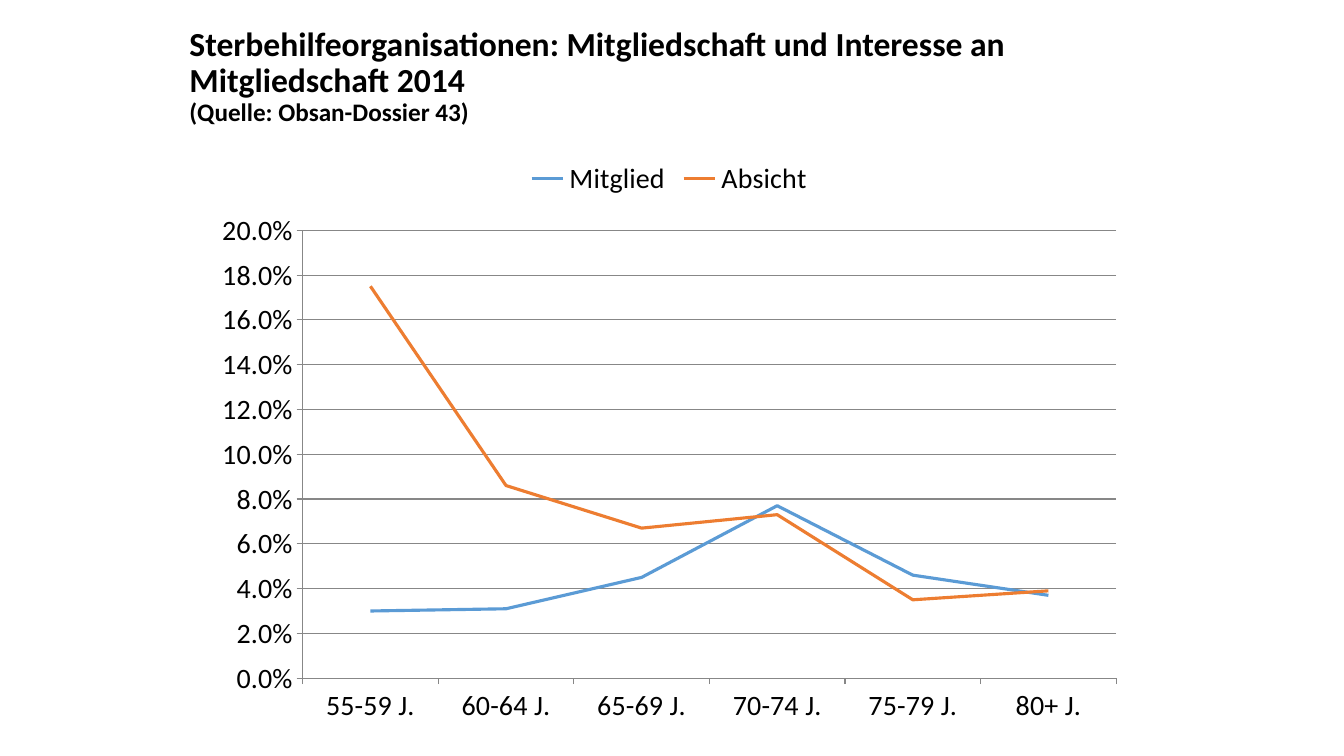
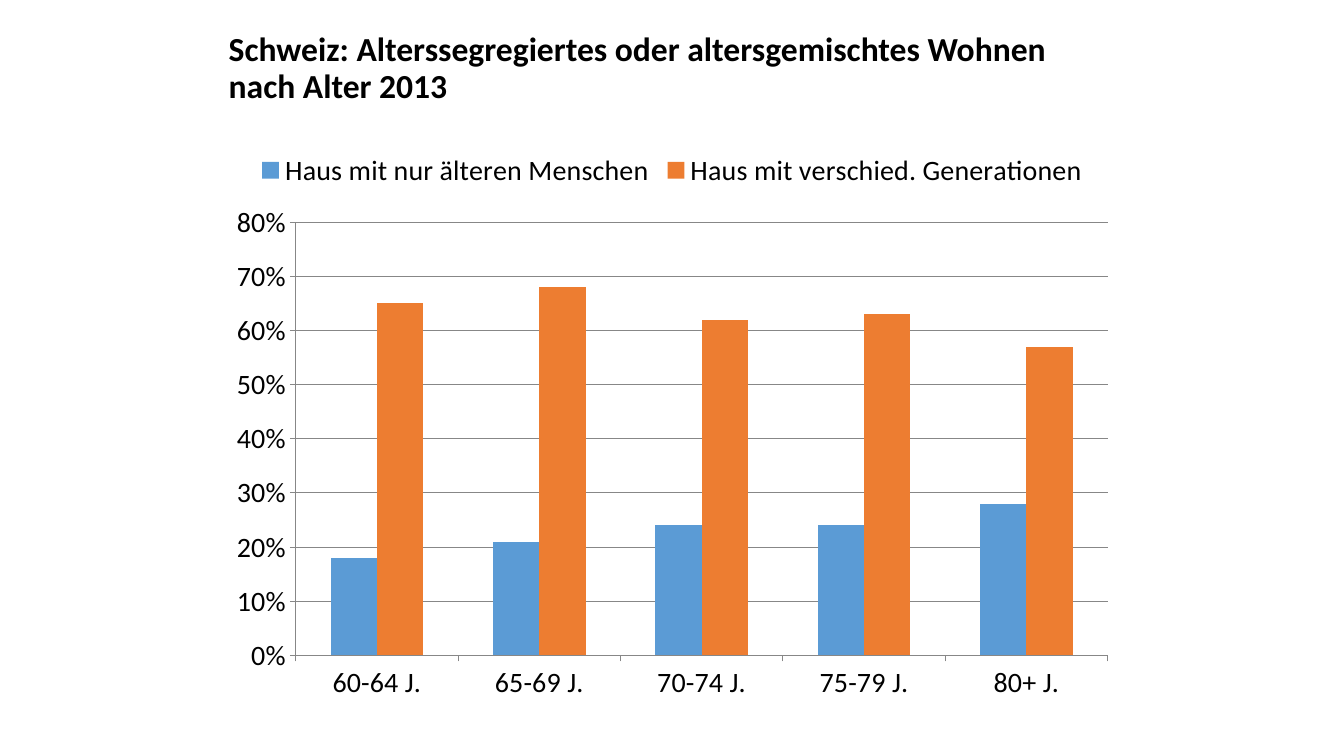
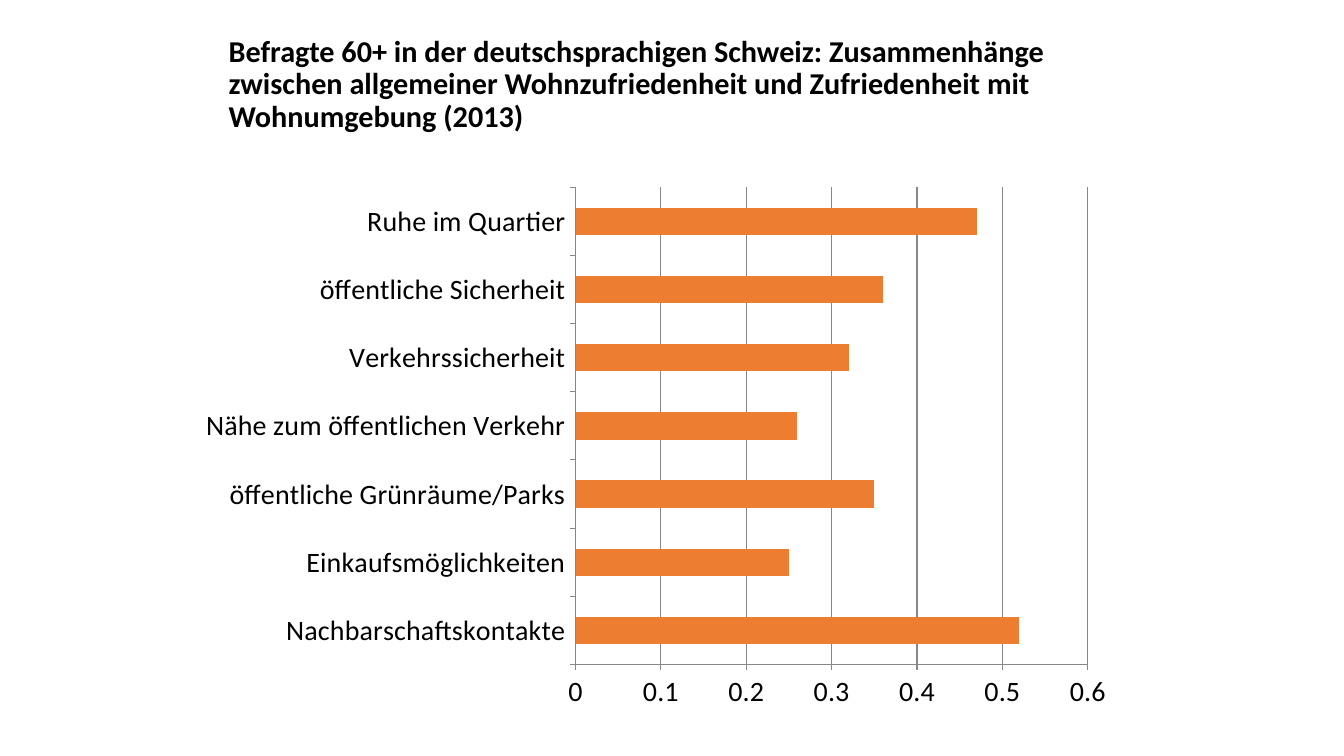
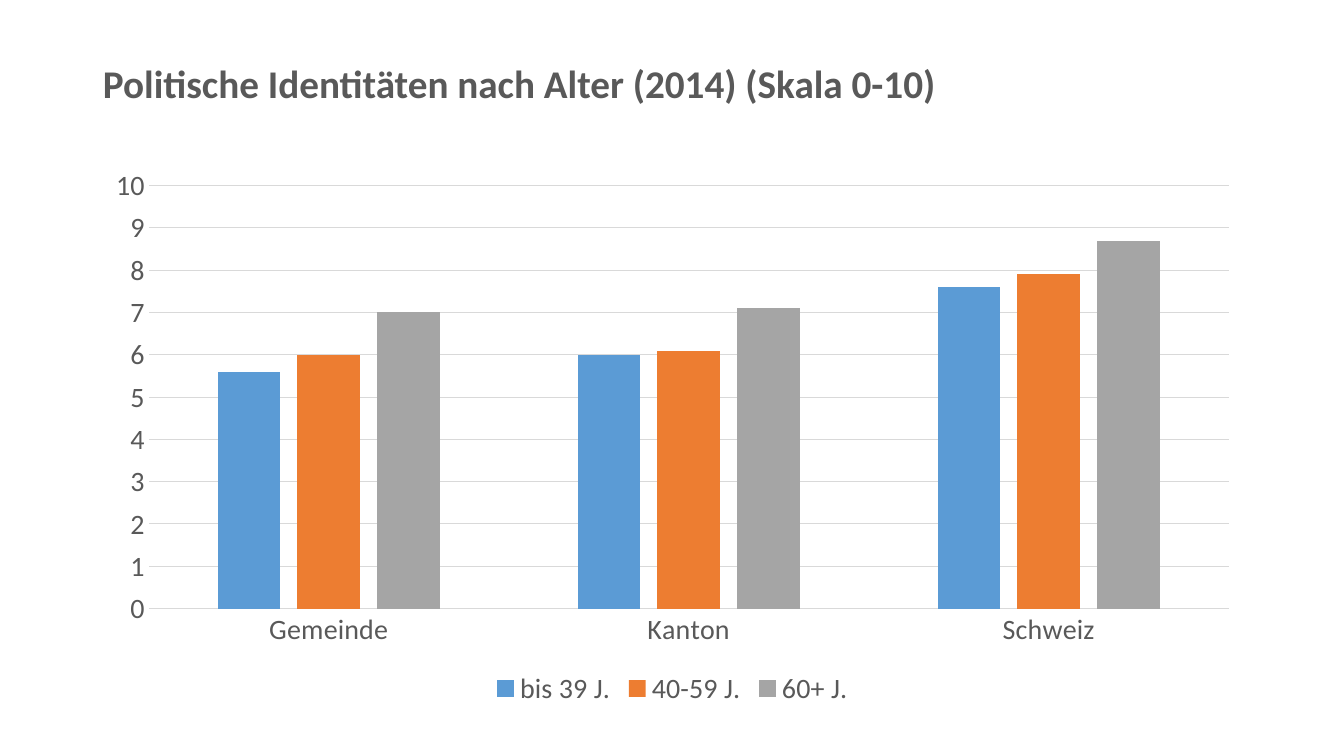
from dataclasses import dataclass

from pptx import Presentation
from pptx.chart.data import CategoryChartData
from pptx.dml.color import RGBColor
from pptx.enum.chart import XL_CHART_TYPE as ChartType
from pptx.enum.chart import XL_LEGEND_POSITION as LegendPosition
from pptx.enum.chart import XL_TICK_MARK as TickMark
from pptx.enum.text import MSO_ANCHOR as Anchor
from pptx.enum.text import MSO_AUTO_SIZE as AutoSize
from pptx.enum.text import PP_ALIGN as Align
from pptx.util import Cm, Pt

TITLE_ONLY_LAYOUT = 5


@dataclass(frozen=True)
class Theme:
    font: str = "Calibri"
    black: RGBColor = RGBColor(0x00, 0x00, 0x00)
    gray_text: RGBColor = RGBColor(0x59, 0x59, 0x59)
    dark_rule: RGBColor = RGBColor(0x87, 0x87, 0x87)
    light_rule: RGBColor = RGBColor(0xD9, 0xD9, 0xD9)
    blue: RGBColor = RGBColor(0x5B, 0x9B, 0xD5)
    orange: RGBColor = RGBColor(0xED, 0x7D, 0x31)
    gray: RGBColor = RGBColor(0xA5, 0xA5, 0xA5)
    title_size: Pt = Pt(24)
    long_title_size: Pt = Pt(21.6)
    large_title_size: Pt = Pt(28)
    source_size: Pt = Pt(18)
    chart_size: Pt = Pt(20)
    rule_width: Pt = Pt(0.75)
    series_width: Pt = Pt(2.25)
    title_spacing: float = 0.9


THEME = Theme()


@dataclass(frozen=True)
class Box:
    """A rectangle in centimetres."""
    left: float
    top: float
    width: float
    height: float

    def lengths(self):
        return tuple(Cm(value) for value in
                     (self.left, self.top, self.width, self.height))


@dataclass(frozen=True)
class ChartStyle:
    text_color: RGBColor
    rule_color: RGBColor
    tick_mark: TickMark
    value_line: bool
    gap_width: int
    overlap: int


DARK_STYLE = ChartStyle(THEME.black, THEME.dark_rule, TickMark.OUTSIDE,
                        True, 150, 0)
LIGHT_STYLE = ChartStyle(THEME.gray_text, THEME.light_rule, TickMark.NONE,
                         False, 219, -27)


@dataclass(frozen=True)
class ChartContent:
    kind: ChartType
    categories: tuple
    series: tuple  # (name, color, values) for each series
    maximum: float
    step: float
    number_format: str = "General"
    legend: LegendPosition | None = None
    style: ChartStyle = DARK_STYLE


def place_title(slide, box, text, size, color, source=None):
    """Fill the title placeholder, with an optional smaller source line."""
    title = slide.shapes.title
    title.left, title.top, title.width, title.height = box.lengths()
    frame = title.text_frame
    frame.word_wrap = True
    frame.auto_size = AutoSize.NONE
    frame.vertical_anchor = Anchor.MIDDLE
    paragraph = frame.paragraphs[0]
    paragraph.alignment = Align.LEFT
    paragraph.line_spacing = THEME.title_spacing
    font = paragraph.font
    font.name, font.size, font.bold = THEME.font, size, True
    font.color.rgb = color
    paragraph.add_run().text = text
    if source:
        paragraph.add_line_break()
        run = paragraph.add_run()
        run.text = source
        run.font.size = THEME.source_size


def style_rule(line, color):
    line.color.rgb = color
    line.width = THEME.rule_width


def style_axes(chart, content):
    style = content.style
    for axis in (chart.category_axis, chart.value_axis):
        axis.major_tick_mark = style.tick_mark
        axis.minor_tick_mark = TickMark.NONE
        style_rule(axis.format.line, style.rule_color)
    chart.category_axis.has_major_gridlines = False
    values = chart.value_axis
    values.minimum_scale, values.maximum_scale = 0, content.maximum
    values.major_unit = content.step
    values.has_major_gridlines = True
    style_rule(values.major_gridlines.format.line, style.rule_color)
    values.tick_labels.number_format = content.number_format
    values.tick_labels.number_format_is_linked = False
    if not style.value_line:
        values.format.line.fill.background()


def style_series(chart, content):
    plot = chart.plots[0]
    plot.vary_by_categories = False
    is_line = content.kind == ChartType.LINE
    if not is_line:
        plot.gap_width = content.style.gap_width
        plot.overlap = content.style.overlap
    for series, (_, color, _) in zip(plot.series, content.series):
        if is_line:
            series.smooth = False
            series.format.line.color.rgb = color
            series.format.line.width = THEME.series_width
        else:
            series.format.fill.solid()
            series.format.fill.fore_color.rgb = color


def place_chart(slide, box, content):
    data = CategoryChartData()
    data.categories = content.categories
    for name, _, values in content.series:
        data.add_series(name, values)
    chart = slide.shapes.add_chart(content.kind, *box.lengths(), data).chart
    chart.has_title = False
    chart.font.name = THEME.font
    chart.font.size = THEME.chart_size
    chart.font.color.rgb = content.style.text_color
    chart.has_legend = content.legend is not None
    if chart.has_legend:
        chart.legend.position = content.legend
        chart.legend.include_in_layout = False
    style_axes(chart, content)
    style_series(chart, content)


def add_chart_slide(presentation, title_box, title, chart_box, content,
                    title_size=THEME.title_size, source=None):
    layout = presentation.slide_layouts[TITLE_ONLY_LAYOUT]
    slide = presentation.slides.add_slide(layout)
    place_title(slide, title_box, title, title_size,
                content.style.text_color, source)
    place_chart(slide, chart_box, content)


MEMBERSHIP = ChartContent(
    ChartType.LINE,
    ("55-59 J.", "60-64 J.", "65-69 J.", "70-74 J.", "75-79 J.", "80+ J."),
    (("Mitglied", THEME.blue, (0.03, 0.031, 0.045, 0.077, 0.046, 0.037)),
     ("Absicht", THEME.orange, (0.175, 0.086, 0.067, 0.073, 0.035, 0.039))),
    maximum=0.2, step=0.02, number_format="0.0%", legend=LegendPosition.TOP)

HOUSING = ChartContent(
    ChartType.COLUMN_CLUSTERED,
    ("60-64 J.", "65-69 J.", "70-74 J.", "75-79 J.", "80+ J."),
    (("Haus mit nur älteren Menschen", THEME.blue,
      (0.18, 0.21, 0.24, 0.24, 0.28)),
     ("Haus mit verschied. Generationen", THEME.orange,
      (0.65, 0.68, 0.62, 0.63, 0.57))),
    maximum=0.8, step=0.1, number_format="0%", legend=LegendPosition.TOP)

SATISFACTION = ChartContent(
    ChartType.BAR_CLUSTERED,
    ("Nachbarschaftskontakte", "Einkaufsmöglichkeiten",
     "öffentliche Grünräume/Parks", "Nähe zum öffentlichen Verkehr",
     "Verkehrssicherheit", "öffentliche Sicherheit", "Ruhe im Quartier"),
    (("Series 1", THEME.orange,
      (0.52, 0.25, 0.35, 0.26, 0.32, 0.36, 0.47)),),
    maximum=0.6, step=0.1)

IDENTITY = ChartContent(
    ChartType.COLUMN_CLUSTERED,
    ("Gemeinde", "Kanton", "Schweiz"),
    (("bis 39 J.", THEME.blue, (5.6, 6, 7.6)),
     ("40-59 J.", THEME.orange, (6, 6.1, 7.9)),
     ("60+ J.", THEME.gray, (7, 7.1, 8.7))),
    maximum=10, step=1, legend=LegendPosition.BOTTOM, style=LIGHT_STYLE)


def main():
    presentation = Presentation()
    presentation.slide_width, presentation.slide_height = Cm(33.87), Cm(19.05)
    add_chart_slide(
        presentation, Box(4.52, 0.76, 24.21, 2.36),
        "Sterbehilfeorganisationen: Mitgliedschaft und Interesse an "
        "Mitgliedschaft 2014",
        Box(5.13, 3.73, 23.47, 14.78), MEMBERSHIP,
        source="(Quelle: Obsan-Dossier 43)")
    add_chart_slide(
        presentation, Box(5.51, 0.76, 22.86, 1.96),
        "Schweiz: Alterssegregiertes oder altersgemischtes Wohnen "
        "nach Alter 2013",
        Box(5.51, 3.53, 22.86, 14.4), HOUSING)
    add_chart_slide(
        presentation, Box(5.51, 0.76, 22.86, 2.77),
        "Befragte 60+ in der deutschsprachigen Schweiz: Zusammenhänge "
        "zwischen allgemeiner Wohnzufriedenheit und Zufriedenheit mit "
        "Wohnumgebung (2013)",
        Box(4.72, 4.45, 23.62, 13.69), SATISFACTION,
        title_size=THEME.long_title_size)
    add_chart_slide(
        presentation, Box(2.34, 1.02, 29.21, 2.26),
        "Politische Identitäten nach Alter (2014) (Skala 0-10)",
        Box(2.34, 3.96, 29.21, 13.97), IDENTITY,
        title_size=THEME.large_title_size)
    presentation.save("out.pptx")


if __name__ == "__main__":
    main()
